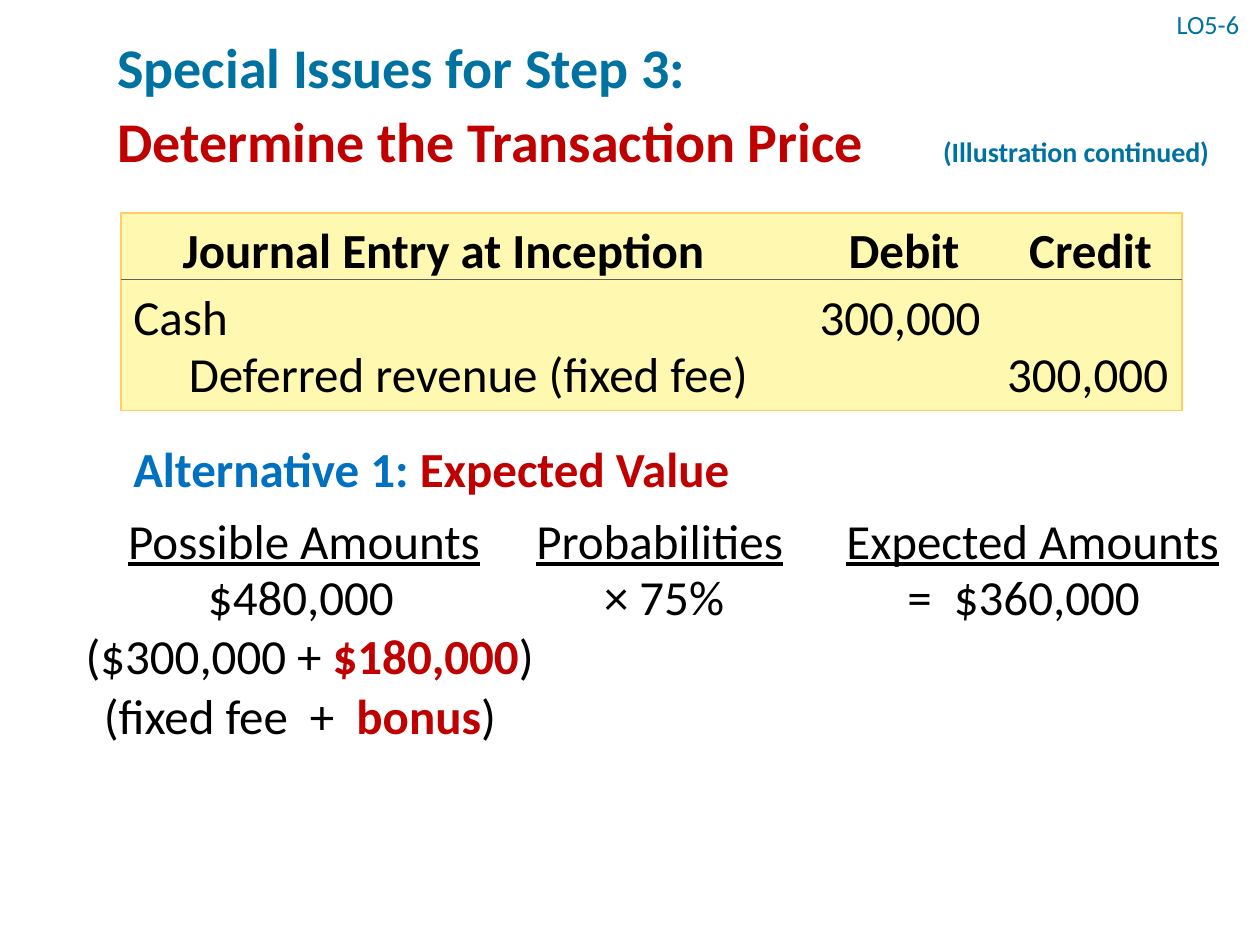
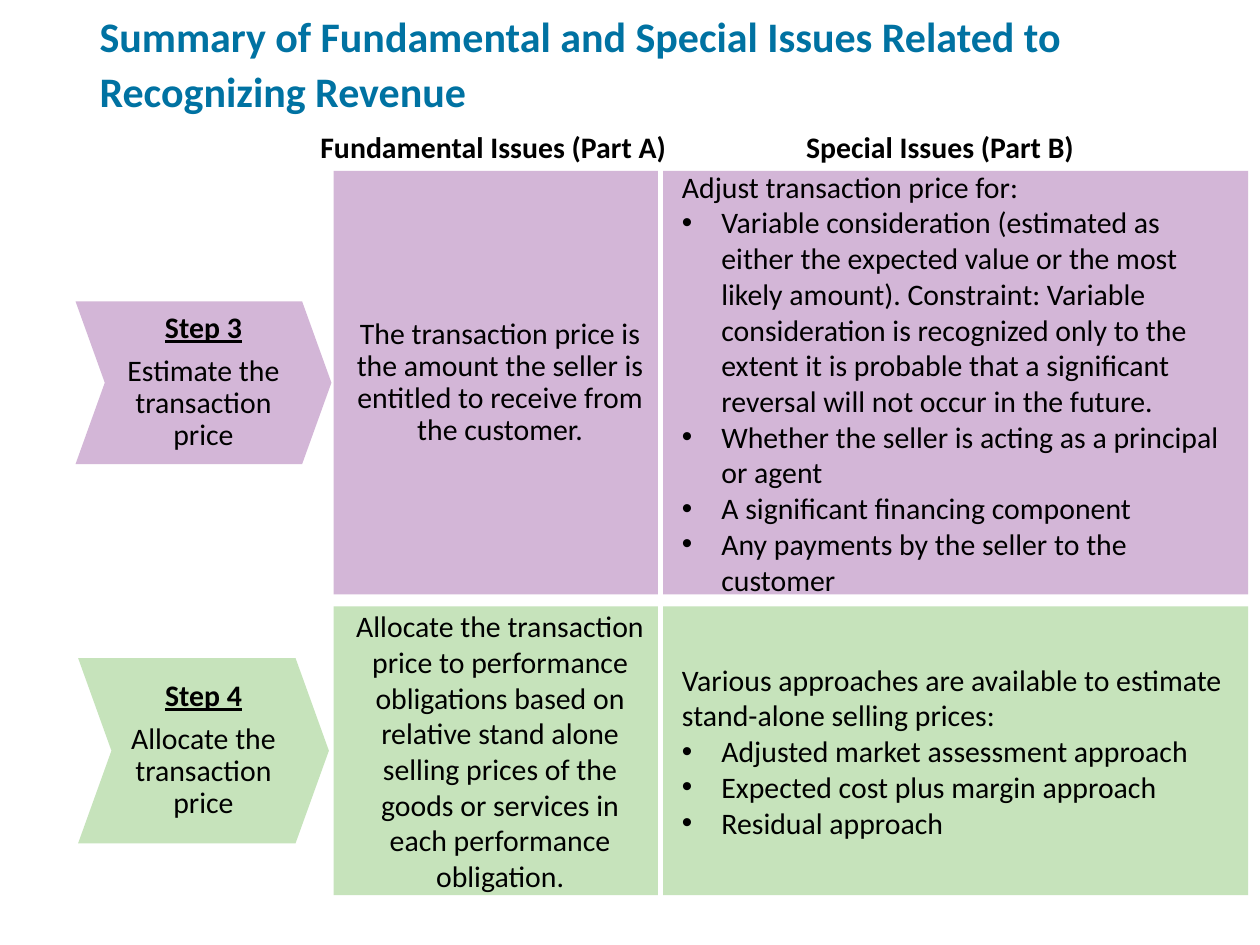
from dataclasses import dataclass

from lxml import etree
from pptx import Presentation
from pptx.dml.color import RGBColor
from pptx.enum.shapes import MSO_CONNECTOR, MSO_SHAPE
from pptx.enum.text import MSO_ANCHOR, MSO_AUTO_SIZE, PP_ALIGN
from pptx.oxml.ns import qn
from pptx.util import Pt

LEFT, CENTER, RIGHT = PP_ALIGN.LEFT, PP_ALIGN.CENTER, PP_ALIGN.RIGHT
TOP, MIDDLE = MSO_ANCHOR.TOP, MSO_ANCHOR.MIDDLE
RECTANGLE, ARROW = MSO_SHAPE.RECTANGLE, MSO_SHAPE.NOTCHED_RIGHT_ARROW
STRAIGHT = MSO_CONNECTOR.STRAIGHT
NO_AUTOFIT = MSO_AUTO_SIZE.NONE

FONT = "Calibri"
TITLE_ONLY = 5
BULLET_INDENT = 22.5
COLORS = {
    "title": "0072A2",
    "accent": "C00000",
    "blue": "0070C0",
    "text": "000000",
    "journal": "FEF8B0",
    "journal_line": "FFCC66",
    "rule": "5F5F5F",
    "step_3": "D3B6D7",
    "step_4": "C6E3BB",
}


@dataclass(frozen=True)
class Box:
    left: float
    top: float
    width: float
    height: float

    def lengths(self) -> tuple:
        return Pt(self.left), Pt(self.top), Pt(self.width), Pt(self.height)


@dataclass(frozen=True)
class Run:
    text: str
    size: float = 28
    color: str = "text"
    bold: bool = False
    underline: bool = False
    tracking: float = 0


@dataclass(frozen=True)
class Line:
    runs: tuple
    align: PP_ALIGN = LEFT
    spacing: float = 1.0
    after: float = 0
    indent: float = 0
    bullet: bool = False


@dataclass(frozen=True)
class Label:
    box: Box
    lines: tuple
    anchor: MSO_ANCHOR = TOP


@dataclass(frozen=True)
class Step:
    name: str
    task: str
    color: str
    top: float
    height: float
    arrow_width: float
    arrow_height: float
    fundamental: Line
    special: str
    bullets: tuple


def rgb(name: str) -> RGBColor:
    return RGBColor.from_string(COLORS[name])


def add_run(paragraph, item: Run) -> None:
    run = paragraph.add_run()
    run.text = item.text
    font = run.font
    font.name = FONT
    font.size = Pt(item.size)
    font.bold = item.bold
    font.underline = item.underline
    font.color.rgb = rgb(item.color)
    if item.tracking:
        run._r.get_or_add_rPr().set("spc", str(round(item.tracking * 100)))


def format_paragraph(paragraph, line: Line) -> None:
    paragraph.alignment = line.align
    paragraph.line_spacing = line.spacing
    paragraph.space_before = Pt(0)
    paragraph.space_after = Pt(line.after)
    properties = paragraph._p.get_or_add_pPr()
    indent = BULLET_INDENT if line.bullet else line.indent
    properties.set("marL", str(Pt(indent)))
    properties.set("indent", str(-Pt(indent) if line.bullet else 0))
    if line.bullet:
        etree.SubElement(properties, qn("a:buFont")).set("typeface", "Arial")
        etree.SubElement(properties, qn("a:buChar")).set("char", "•")


def write_lines(frame, lines: tuple, anchor: MSO_ANCHOR) -> None:
    frame.word_wrap = True
    frame.auto_size = NO_AUTOFIT
    frame.vertical_anchor = anchor
    for index, line in enumerate(lines):
        paragraph = frame.add_paragraph() if index else frame.paragraphs[0]
        format_paragraph(paragraph, line)
        for run in line.runs:
            add_run(paragraph, run)


def add_label(slide, label: Label) -> None:
    shape = slide.shapes.add_textbox(*label.box.lengths())
    write_lines(shape.text_frame, label.lines, label.anchor)


def add_block(slide, kind: MSO_SHAPE, box: Box, fill: str):
    shape = slide.shapes.add_shape(kind, *box.lengths())
    shape.shadow.inherit = False
    shape.fill.solid()
    shape.fill.fore_color.rgb = rgb(fill)
    shape.line.fill.background()
    return shape


def add_panel(slide, box: Box, fill: str, lines: tuple) -> None:
    frame = add_block(slide, RECTANGLE, box, fill).text_frame
    frame.margin_left = Pt(10.8)
    frame.margin_right = frame.margin_top = frame.margin_bottom = Pt(5.76)
    write_lines(frame, lines, MIDDLE)


def add_rule(slide, left: float, right: float, top: float) -> None:
    rule = slide.shapes.add_connector(STRAIGHT, Pt(left), Pt(top), Pt(right), Pt(top))
    rule.line.color.rgb = rgb("rule")
    rule.line.width = Pt(0.5)
    etree.SubElement(rule._element.spPr, qn("a:effectLst"))


def add_titled_slide(presentation, box: Box, rows: tuple):
    slide = presentation.slides.add_slide(presentation.slide_layouts[TITLE_ONLY])
    title = slide.shapes.title
    title.left, title.top, title.width, title.height = box.lengths()
    write_lines(title.text_frame, (Line((), spacing=1.1),), MIDDLE)
    paragraph = title.text_frame.paragraphs[0]
    for index, runs in enumerate(rows):
        if index:
            paragraph.add_line_break()
        for run in runs:
            add_run(paragraph, run)
    return slide


def simple(text: str, left: float, top: float, width: float, align: PP_ALIGN = LEFT,
           bold: bool = False, underline: bool = False, indent: float = 0, size: float = 28) -> Label:
    run = Run(text, size, bold=bold, underline=underline)
    return Label(Box(left, top, width, 41), (Line((run,), align, indent=indent),))


def build_price_slide(presentation) -> None:
    slide = add_titled_slide(
        presentation,
        Box(59.8, 0, 660.2, 113.8),
        (
            (Run("Special Issues for Step 3:", 32, "title", True),),
            (Run("Determine the Transaction Price", 32, "accent", True),
             Run(" ", 32, "accent", True, tracking=37.9),
             Run("(Illustration continued)", 16, "title", True)),
        ),
    )
    journal = Box(69.1, 121.7, 606.2, 113)
    block = add_block(slide, RECTANGLE, journal, "journal")
    block.line.color.rgb = rgb("journal_line")
    block.line.width = Pt(1)

    header_top, cash_top, revenue_top = 121.8, 160.2, 192.6
    heading_top, amount_top = 288, 320
    wide_space = Run(" ", tracking=6.3)
    bonus = Run("bonus", color="accent", bold=True)
    bonus_amount = Run("$180,000", color="accent", bold=True)
    labels = (
        simple("Journal Entry at Inception", journal.left, header_top, 368.6, CENTER, bold=True),
        simple("Debit", 465.8, header_top, 101.5, CENTER, bold=True),
        simple("Credit", 572.4, header_top, 101.5, CENTER, bold=True),
        simple("Cash", journal.left, cash_top, 368.6),
        simple("300,000", 448.6, cash_top, 118.8, RIGHT),
        simple("Deferred revenue (fixed fee)", journal.left, revenue_top, 408.2, indent=31.7),
        simple("300,000", 555.1, revenue_top, 119.5, RIGHT),
        Label(Box(journal.left, 247, 468.7, 41), (
            Line((Run("Alternative 1: ", color="blue", bold=True),
                  Run("Expected Value", color="accent", bold=True))),)),
        simple("Possible Amounts", 66.2, heading_top, 231.1, underline=True),
        simple("Probabilities", 298.1, heading_top, 157.7, CENTER, underline=True),
        simple("Expected Amounts", 476.6, heading_top, 239.8, underline=True),
        simple("× 75%", 330.5, amount_top, 97.9, CENTER),
        Label(Box(511.5, amount_top, 163, 42), (Line((Run("="), wide_space, Run("$360,000"))),)),
        Label(Box(41.8, 320.4, 275.8, 74.9), (
            Line((Run("$480,000"),), indent=70),
            Line((Run("($300,000 + "), bonus_amount, Run(")"))))),
        Label(Box(52.2, 388, 250, 41), (
            Line((Run("(fixed fee"), wide_space, Run("+"), wide_space, bonus, Run(")"))),)),
        Label(Box(665.3, 0.7, 58.3, 28.8), (Line((Run("LO5-6", 15, "title"),), spacing=0.9),), MIDDLE),
    )
    for label in labels:
        add_label(slide, label)
    add_rule(slide, journal.left, journal.left + journal.width, 159.8)


def add_step(slide, step: Step) -> None:
    arrow_center = 116.3
    arrow_box = Box(
        arrow_center - step.arrow_width / 2,
        step.top + (step.height - step.arrow_height) / 2,
        step.arrow_width,
        step.arrow_height,
    )
    arrow = add_block(slide, ARROW, arrow_box, step.color)
    arrow.adjustments[0], arrow.adjustments[1] = 1, 0.18
    heading = Run(step.name, 17, bold=True, underline=True)
    write_lines(arrow.text_frame, tuple(
        Line((run,), CENTER, 0.9, 6) for run in (heading, Run(step.task, 17))
    ), MIDDLE)
    add_panel(slide, Box(190.6, step.top, 185.3, step.height), step.color, (step.fundamental,))
    special = (Line((Run(step.special, 17),)),) + tuple(
        Line((Run(text, 17),), bullet=True) for text in step.bullets
    )
    add_panel(slide, Box(378.9, step.top, 334.3, step.height), step.color, special)


def build_summary_slide(presentation) -> None:
    slide = add_titled_slide(
        presentation,
        Box(49.7, 0.7, 660.2, 67.7),
        ((Run("Summary of Fundamental and Special Issues Related to Recognizing Revenue", 24, "title", True),),),
    )
    steps = (
        Step("Step 3", "Estimate the transaction price", "step_3", 97.7, 242, 146.2, 92.9,
             Line((Run("The transaction price is the amount the seller is entitled to receive "
                       "from the customer.", 17),), CENTER, 0.9, 2.55),
             "Adjust transaction price for:",
             ("Variable consideration (estimated as either the expected value or the most likely amount). "
              "Constraint: Variable consideration is recognized only to the extent it is probable that "
              "a significant reversal will not occur in the future.",
              "Whether the seller is acting as a principal or agent",
              "A significant financing component",
              "Any payments by the seller to the customer")),
        Step("Step 4", "Allocate the transaction price", "step_4", 346.5, 165, 143.3, 105.8,
             Line((Run("Allocate the transaction price to performance obligations based on relative "
                       "stand alone selling prices of the goods or services in each performance "
                       "obligation.", 17),), CENTER),
             "Various approaches are available to estimate stand-alone selling prices:",
             ("Adjusted market assessment approach",
              "Expected cost plus margin approach",
              "Residual approach")),
    )
    for step in steps:
        add_step(slide, step)
    for text, left in (("Fundamental Issues (Part A)", 171.9), ("Special Issues (Part B)", 427.2)):
        add_label(slide, simple(text, left, 69.8, 220, CENTER, bold=True, size=17))


def main() -> None:
    presentation = Presentation()
    presentation.slide_width, presentation.slide_height = Pt(720), Pt(540)
    build_price_slide(presentation)
    build_summary_slide(presentation)
    presentation.save("out.pptx")


if __name__ == "__main__":
    main()
